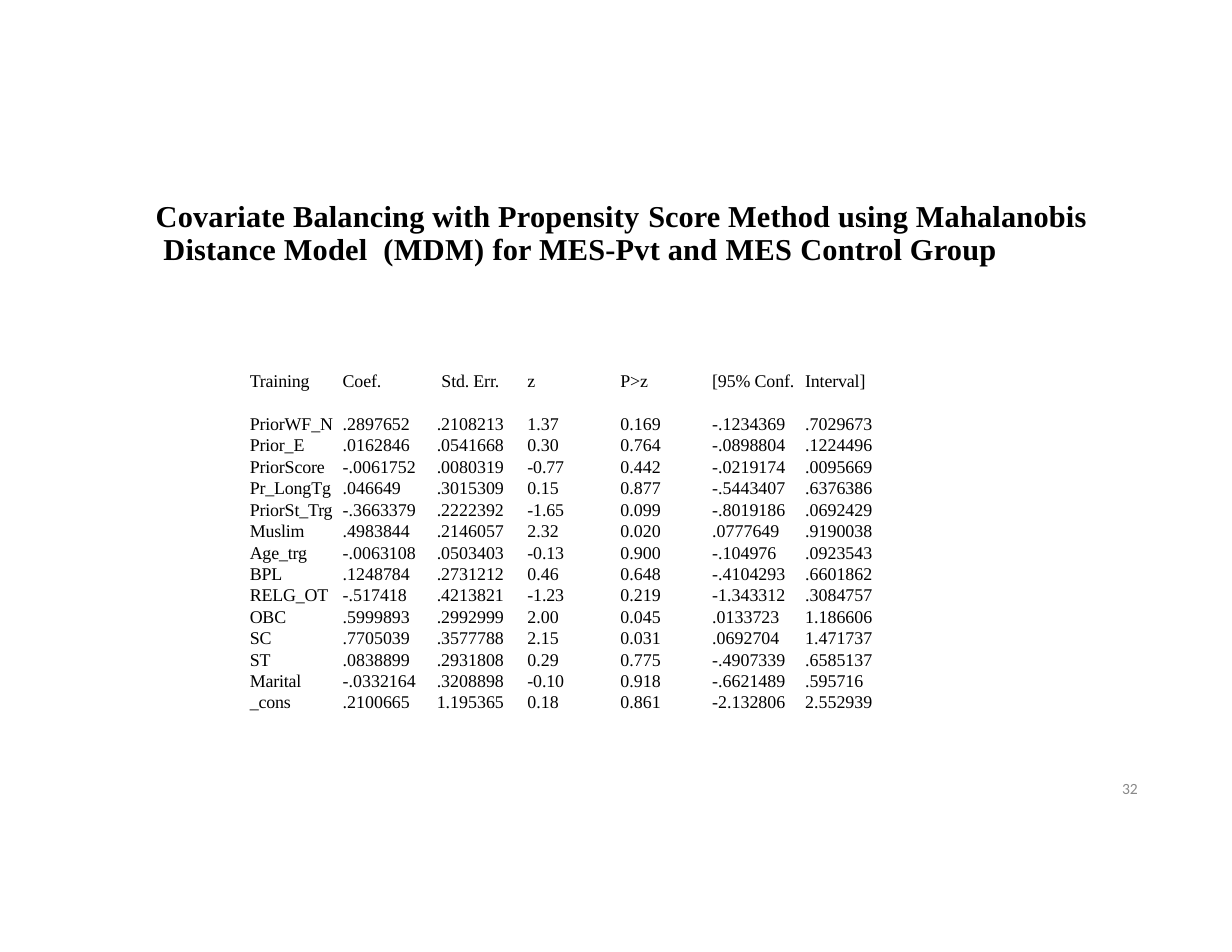
from pptx import Presentation
from pptx.dml.color import RGBColor
from pptx.enum.text import MSO_ANCHOR, MSO_AUTO_SIZE, PP_ALIGN
from pptx.util import Inches, Pt

TOP = MSO_ANCHOR.TOP
NO_FIT = MSO_AUTO_SIZE.NONE
LEFT, CENTER = PP_ALIGN.LEFT, PP_ALIGN.CENTER
COLORS = {"text": "000000", "number": "898989"}
SERIF, SANS = "Times New Roman", "Calibri"
PLAIN_TABLE = "{2D5ABB26-0587-4C30-8999-92F81FD0307C}"
TITLE_ONLY = 5

TITLE_RUNS = [
    ("Covariate Balancing with Propensity ", 0.1),
    ("Score ", 0),
    ("Method using Mahalanobis  Distance Model  ", 0.1),
    ("(MDM) ", 0.2),
    ("for MES-Pvt and ", 0.1),
    ("MES ", 0.2),
    ("Control Group", 0.1),
]
HEADINGS = ["Training", "Coef.", "Std. Err.", "z", "P>z", "[95% Conf.", "Interval]"]
ESTIMATES = """
PriorWF_N .2897652 .2108213 1.37 0.169 -.1234369 .7029673
Prior_E .0162846 .0541668 0.30 0.764 -.0898804 .1224496
PriorScore -.0061752 .0080319 -0.77 0.442 -.0219174 .0095669
Pr_LongTg .046649 .3015309 0.15 0.877 -.5443407 .6376386
PriorSt_Trg -.3663379 .2222392 -1.65 0.099 -.8019186 .0692429
Muslim .4983844 .2146057 2.32 0.020 .0777649 .9190038
Age_trg -.0063108 .0503403 -0.13 0.900 -.104976 .0923543
BPL .1248784 .2731212 0.46 0.648 -.4104293 .6601862
RELG_OT -.517418 .4213821 -1.23 0.219 -1.343312 .3084757
OBC .5999893 .2992999 2.00 0.045 .0133723 1.186606
SC .7705039 .3577788 2.15 0.031 .0692704 1.471737
ST .0838899 .2931808 0.29 0.775 -.4907339 .6585137
Marital -.0332164 .3208898 -0.10 0.918 -.6621489 .595716
_cons .2100665 1.195365 0.18 0.861 -2.132806 2.552939
"""
COLUMN_WIDTHS = [8.3, 7.7, 8, 6.9, 8.4, 10.2, 6.8]
COLUMN_INDENTS = [0.3, 0.3, 0, 1.1, 2.5, 2.3, 0.4]
CENTERED_COLUMN, Z_COLUMN = 2, 3


class SlideBuilder:
    """Places styled elements on a slide with a grid of 110 columns by 85 rows."""

    def __init__(self, presentation):
        """Add a title-only slide and measure its grid step."""
        self.step = presentation.slide_width / 110
        self.slide = presentation.slides.add_slide(presentation.slide_layouts[TITLE_ONLY])

    def units(self, *lengths):
        """Turn grid lengths into slide lengths."""
        return [round(length * self.step) for length in lengths]

    def frame(self, text_frame, top_inset=0):
        """Clear the insets and anchor the text at the top."""
        text_frame.margin_left = text_frame.margin_right = text_frame.margin_bottom = 0
        text_frame.margin_top = self.units(top_inset)[0]
        text_frame.vertical_anchor = TOP
        text_frame.word_wrap = True
        text_frame.auto_size = NO_FIT

    def add_runs(self, paragraph, runs, size, leading, font=SERIF, color="text",
                 bold=False, align=LEFT, indent=0):
        """Add runs of text with letter spacing to a paragraph."""
        paragraph.alignment = align
        paragraph.line_spacing = Pt(leading)
        properties = paragraph._p.get_or_add_pPr()
        properties.set("marL", str(self.units(indent)[0]))
        properties.set("indent", "0")
        for text, spacing in runs:
            run = paragraph.add_run()
            run.text = text
            run.font.name = font
            run.font.size = Pt(size)
            run.font.bold = bold
            run.font.color.rgb = RGBColor.from_string(COLORS[color])
            run._r.get_or_add_rPr().set("spc", str(round(spacing * 100)))

    def title(self, runs, *box):
        """Move and fill the title placeholder."""
        shape = self.slide.shapes.title
        shape.left, shape.top, shape.width, shape.height = self.units(*box)
        self.frame(shape.text_frame, 0.5)
        paragraph = shape.text_frame.paragraphs[0]
        paragraph.space_before = Pt(3.6)
        self.add_runs(paragraph, runs, 19.5, 21.4, bold=True, indent=0.1)

    def page_number(self, number, *box):
        """Add the page number."""
        shape = self.slide.shapes.add_textbox(*self.units(*box))
        self.frame(shape.text_frame)
        self.add_runs(shape.text_frame.paragraphs[0], [(number, -0.1)], 10, 10.4,
                      font=SANS, color="number", indent=0.1)

    def table(self, rows, widths, heights, left, top):
        """Add an unruled table of estimates."""
        box = self.units(left, top, sum(widths), sum(heights))
        table = self.slide.shapes.add_table(len(rows), len(widths), *box).table
        table.first_row = table.horz_banding = False
        table._tbl.tblPr[0].text = PLAIN_TABLE
        for column, width in zip(table.columns, self.units(*widths)):
            column.width = width
        for row, height in zip(table.rows, self.units(*heights)):
            row.height = height
        leadings = [12.6, 13.6] + [12.8] * (len(rows) - 3) + [12.3]
        for row_index, values in enumerate(rows):
            for column_index, value in enumerate(values):
                self.cell(table.cell(row_index, column_index), value, row_index,
                          column_index, leadings[row_index])

    def cell(self, cell, value, row_index, column_index, leading):
        """Fill one table cell."""
        cell.fill.background()
        cell.margin_left = cell.margin_right = cell.margin_bottom = 0
        cell.margin_top = self.units(0.9 if row_index == 1 else 0)[0]
        cell.vertical_anchor = TOP
        negative_z = column_index == Z_COLUMN and value.startswith("-")
        tight = row_index == 0 or column_index == 0 or negative_z
        self.add_runs(cell.text_frame.paragraphs[0], [(value, -0.1 if tight else 0)],
                      11.5, leading, indent=COLUMN_INDENTS[column_index],
                      align=CENTER if column_index == CENTERED_COLUMN else LEFT)


def main():
    """Build and save the slide."""
    presentation = Presentation()
    presentation.slide_width, presentation.slide_height = Inches(11), Inches(8.5)
    builder = SlideBuilder(presentation)
    estimates = [line.split() for line in ESTIMATES.strip().splitlines()]
    heights = [2.8, 2.9] + [1.92] * (len(estimates) - 1)
    builder.page_number("32", 100.1, 69.8, 2, 1.7)
    builder.title(TITLE_RUNS, 13.8, 17.4, 83.5, 6.5)
    builder.table([HEADINGS] + estimates, COLUMN_WIDTHS, heights, 22, 33.2)
    presentation.save("out.pptx")


if __name__ == "__main__":
    main()
